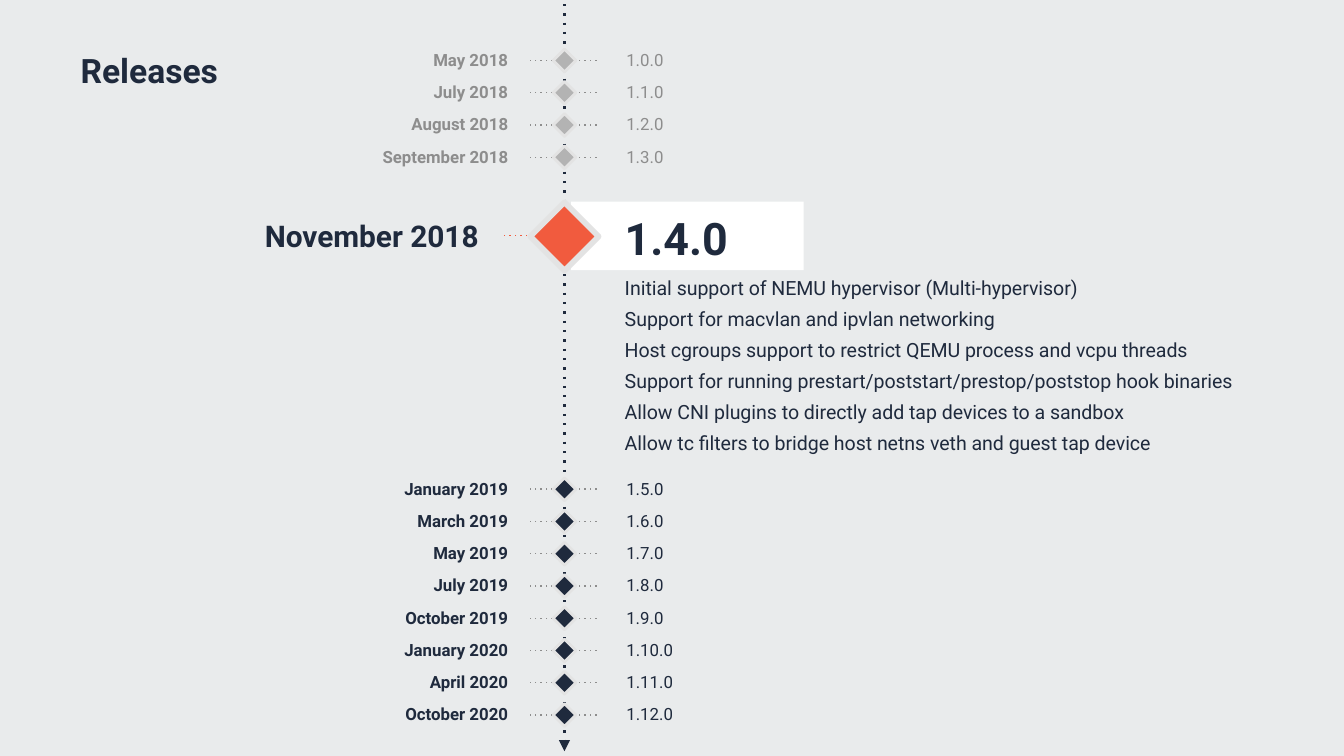
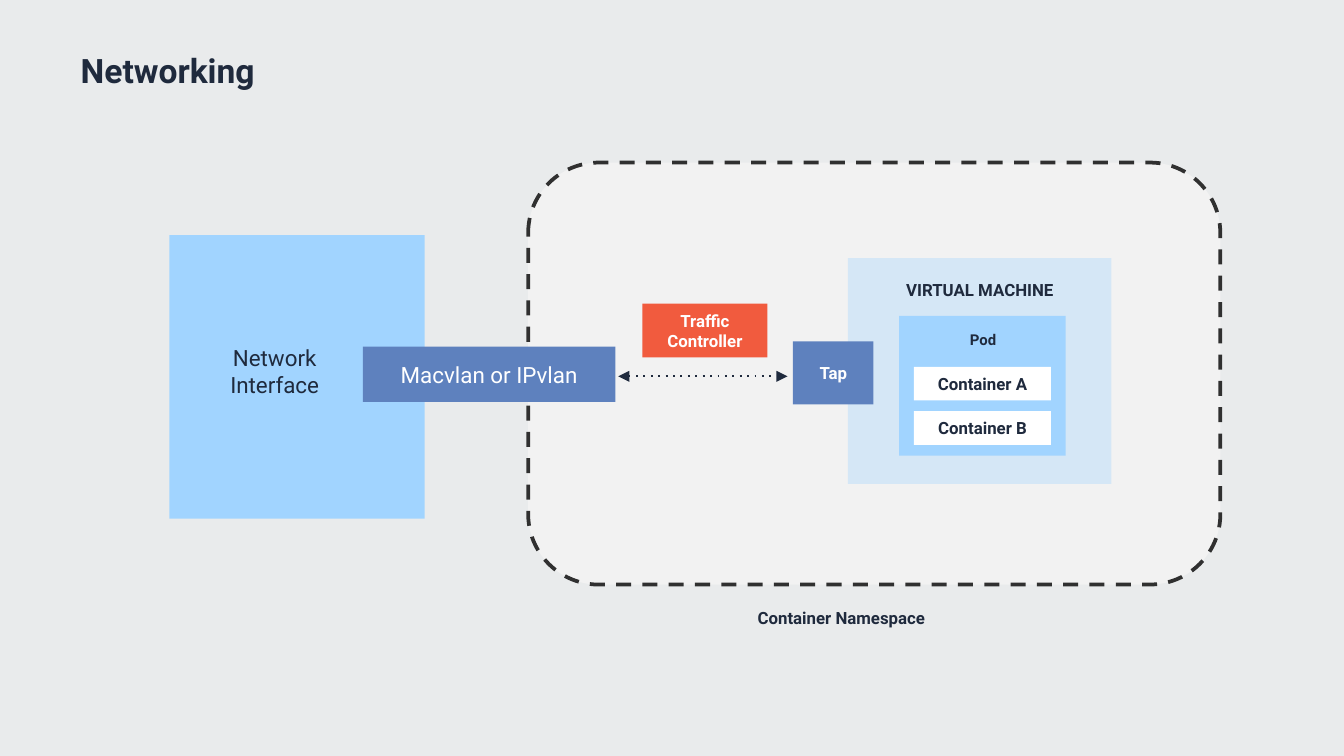
from lxml import etree
from pptx import Presentation
from pptx.dml.color import RGBColor
from pptx.enum.dml import MSO_LINE
from pptx.enum.shapes import MSO_CONNECTOR, MSO_SHAPE
from pptx.enum.text import MSO_ANCHOR, PP_ALIGN
from pptx.oxml.ns import qn
from pptx.util import Inches, Pt

RECT, ROUNDED = MSO_SHAPE.RECTANGLE, MSO_SHAPE.ROUNDED_RECTANGLE
LEFT, CENTER, RIGHT = PP_ALIGN.LEFT, PP_ALIGN.CENTER, PP_ALIGN.RIGHT
TOP, MIDDLE = MSO_ANCHOR.TOP, MSO_ANCHOR.MIDDLE
DASH = MSO_LINE.DASH

NAVY = RGBColor(0x1F, 0x2A, 0x3D)
PAPER = RGBColor(0xE9, 0xEB, 0xEC)
WHITE = RGBColor(0xFF, 0xFF, 0xFF)
ORANGE = RGBColor(0xF1, 0x5B, 0x3E)
SKY = RGBColor(0xA1, 0xD4, 0xFF)
BLUE = RGBColor(0x5E, 0x81, 0xBE)
PALE = RGBColor(0xF2, 0xF2, 0xF2)
CHARCOAL = RGBColor(0x30, 0x30, 0x30)
GRAY = RGBColor(0x8D, 0x8D, 0x8D)
SILVER = RGBColor(0xB3, 0xB3, 0xB3)
EDGE = RGBColor(0xE3, 0xE3, 0xE3)

FONT = "Roboto"
WIDTH = 10
HEIGHT = WIDTH * 9 / 16

PAST = [("May 2018", "1.0.0"), ("July 2018", "1.1.0"),
        ("August 2018", "1.2.0"), ("September 2018", "1.3.0")]
LATER = [("January 2019", "1.5.0"), ("March 2019", "1.6.0"),
         ("May 2019", "1.7.0"), ("July 2019", "1.8.0"),
         ("October 2019", "1.9.0"), ("January 2020", "1.10.0"),
         ("April 2020", "1.11.0"), ("October 2020", "1.12.0")]
FEATURED = ("November 2018", "1.4.0", [
    "Initial support of NEMU hypervisor (Multi-hypervisor)",
    "Support for macvlan and ipvlan networking",
    "Host cgroups support to restrict QEMU process and vcpu threads",
    "Support for running prestart/poststart/prestop/poststop hook binaries",
    "Allow CNI plugins to directly add tap devices to a sandbox",
    "Allow tc filters to bridge host netns veth and guest tap device",
])
AXIS_X, ROW_STEP = 4.2, 0.24
PAST_Y, FEATURED_Y, LATER_Y = 0.45, 1.75, 3.64
CHAR_WIDTH = 0.08

CONTAINERS = ["Container A", "Container B"]
POD = (6.69, 2.35, 1.24, 1.04)
VM = (6.31, 1.92, 1.96, 1.68)


def write(shape, lines, size=9, color=NAVY, bold=True, align=LEFT, anchor=TOP,
          insets=(0.1, 0.05, 0.1, 0.05)):
    tf = shape.text_frame
    tf.word_wrap = True
    tf.vertical_anchor = anchor
    tf.margin_left, tf.margin_top, tf.margin_right, tf.margin_bottom = map(Inches, insets)
    for i, line in enumerate([lines] if isinstance(lines, str) else lines):
        p = tf.add_paragraph() if i else tf.paragraphs[0]
        p.alignment = align
        r = p.add_run()
        r.text = line
        font = r.font
        font.name, font.size, font.bold = FONT, Pt(size), bold
        font.color.rgb = color
    return tf


def add_text(shapes, box, lines, **fmt):
    return write(shapes.add_textbox(*map(Inches, box)), lines, **fmt)


def add_box(shapes, box, fill, kind=RECT, line=None, width=1.5, dash=None, alpha=None):
    sp = shapes.add_shape(kind, *map(Inches, box))
    sp.shadow.inherit = False
    sp.fill.solid()
    sp.fill.fore_color.rgb = fill
    if alpha:
        clr = sp.fill._xPr.find(".//" + qn("a:srgbClr"))
        etree.SubElement(clr, qn("a:alpha")).set("val", str(alpha * 1000))
    if line is None:
        sp.line.fill.background()
    else:
        sp.line.color.rgb, sp.line.width = line, Pt(width)
        if dash:
            sp.line.dash_style = dash
    return sp


def add_dotted(shapes, x1, y1, x2, y2, color=GRAY, width=0.75, arrows=()):
    """Dotted line; arrows holds headEnd and/or tailEnd, in that order."""
    cx = shapes.add_connector(MSO_CONNECTOR.STRAIGHT, *map(Inches, (x1, y1, x2, y2)))
    cx.line.color.rgb, cx.line.width = color, Pt(width)
    ln = cx.line._get_or_add_ln()
    etree.SubElement(ln, qn("a:prstDash")).set("val", "dot")
    for end in arrows:
        etree.SubElement(ln, qn("a:" + end)).set("type", "triangle")
    etree.SubElement(cx._element.spPr, qn("a:effectLst"))


def add_diamond(shapes, y, side, fill, edge):
    box = (AXIS_X - side / 2, y - side / 2, side, side)
    add_box(shapes, box, fill, line=EDGE, width=edge).rotation = 45


def add_slide(prs, title, title_width):
    s = prs.slides.add_slide(prs.slide_layouts[5])
    s.background.fill.solid()
    s.background.fill.fore_color.rgb = PAPER
    t = s.shapes.title
    t.left, t.top, t.width, t.height = map(Inches, (0.5, 0.1, title_width, 0.84))
    write(t, title, size=18, anchor=MIDDLE, insets=(0.1,) * 4)
    return s


def add_releases(s, releases, first_y, color, fill):
    for i, (date, version) in enumerate(releases):
        y = first_y + i * ROW_STEP
        shapes = s.shapes.add_group_shape().shapes
        for text, bold, align in ((date, True, RIGHT), (version, False, LEFT)):
            w = len(text) * CHAR_WIDTH
            x = 3.82 - w if align == RIGHT else 4.62
            add_text(shapes, (x, y - 0.13, w, 0.25), text, color=color, bold=bold,
                     align=align, insets=(0.04, 0.05, 0.04, 0.05))
        add_dotted(shapes, AXIS_X + 0.24, y, AXIS_X - 0.26, y)
        add_diamond(shapes, y, 0.12, fill, 1.5)


def releases_slide(prs):
    s = add_slide(prs, "Releases", 2.24)
    add_dotted(s.shapes, AXIS_X, 0.03, AXIS_X, 5.59, NAVY, 1.25, ["tailEnd"])
    add_releases(s, PAST, PAST_Y, GRAY, SILVER)
    add_releases(s, LATER, LATER_Y, NAVY, NAVY)

    date, version, features = FEATURED
    add_dotted(s.shapes, 4.25, FEATURED_Y, 3.75, FEATURED_Y, ORANGE)
    add_box(s.shapes, (4.25, 1.5, 1.73, 0.51), WHITE)
    tf = add_text(s.shapes, (4.55, 1.47, 5.41, 2.46), [version] + features,
                  size=10.5, bold=False, insets=(0.1,) * 4)
    heading, *items = tf.paragraphs
    heading.runs[0].font.size, heading.runs[0].font.bold = Pt(24), True
    for i, p in enumerate(items):
        p.space_before = Pt(4 if i else 6)
    add_text(s.shapes, (1.77, 1.47, 2.08, 0.57), date, size=16, anchor=MIDDLE,
             insets=(0.2, 0.1, 0.1, 0.1))
    add_diamond(s.shapes, 1.76, 0.36, ORANGE, 3)


def networking_slide(prs):
    s = add_slide(prs, "Networking", 6.4)
    shapes = s.shapes
    label = dict(align=CENTER)
    joint = dict(color=WHITE, align=CENTER, anchor=MIDDLE, insets=(0, 0.05, 0, 0.05))

    add_box(shapes, (1.26, 1.75, 1.9, 2.11), SKY)
    add_box(shapes, (3.93, 1.21, 5.15, 3.14), PALE, ROUNDED, CHARCOAL, 2, DASH)
    add_box(shapes, VM, SKY, alpha=35)
    add_text(shapes, (VM[0], 2.03, VM[2], 0.25), "VIRTUAL MACHINE", **label)
    write(add_box(shapes, (5.9, 2.54, 0.6, 0.47), BLUE), "Tap", **joint)

    add_box(shapes, POD, SKY)
    add_text(shapes, (6.7, 2.41, 1.23, 0.24), "Pod", size=8, **label)
    for i, name in enumerate(CONTAINERS):
        box = (POD[0] + 0.11, 2.73 + i * 0.33, 1.02, 0.25)
        write(add_box(shapes, box, WHITE), name, **label)

    add_dotted(shapes, 4.6, 2.8, 5.86, 2.8, NAVY, 1, ["headEnd", "tailEnd"])
    write(add_box(shapes, (2.7, 2.58, 1.88, 0.41), BLUE), "Macvlan or IPvlan",
          size=12, bold=False, **joint)
    add_text(shapes, (5.28, 4.47, 1.96, 0.25), "Container Namespace", **label)
    add_text(shapes, (1.43, 2.51, 1.23, 0.5), "Network Interface",
             size=12, bold=False, **label)
    write(add_box(shapes, (4.78, 2.26, 0.93, 0.4), ORANGE), ["Traffic", "Controller"],
          color=WHITE, **label)


def main():
    prs = Presentation()
    prs.slide_width, prs.slide_height = Inches(WIDTH), Inches(HEIGHT)
    releases_slide(prs)
    networking_slide(prs)
    prs.save("out.pptx")


if __name__ == "__main__":
    main()
